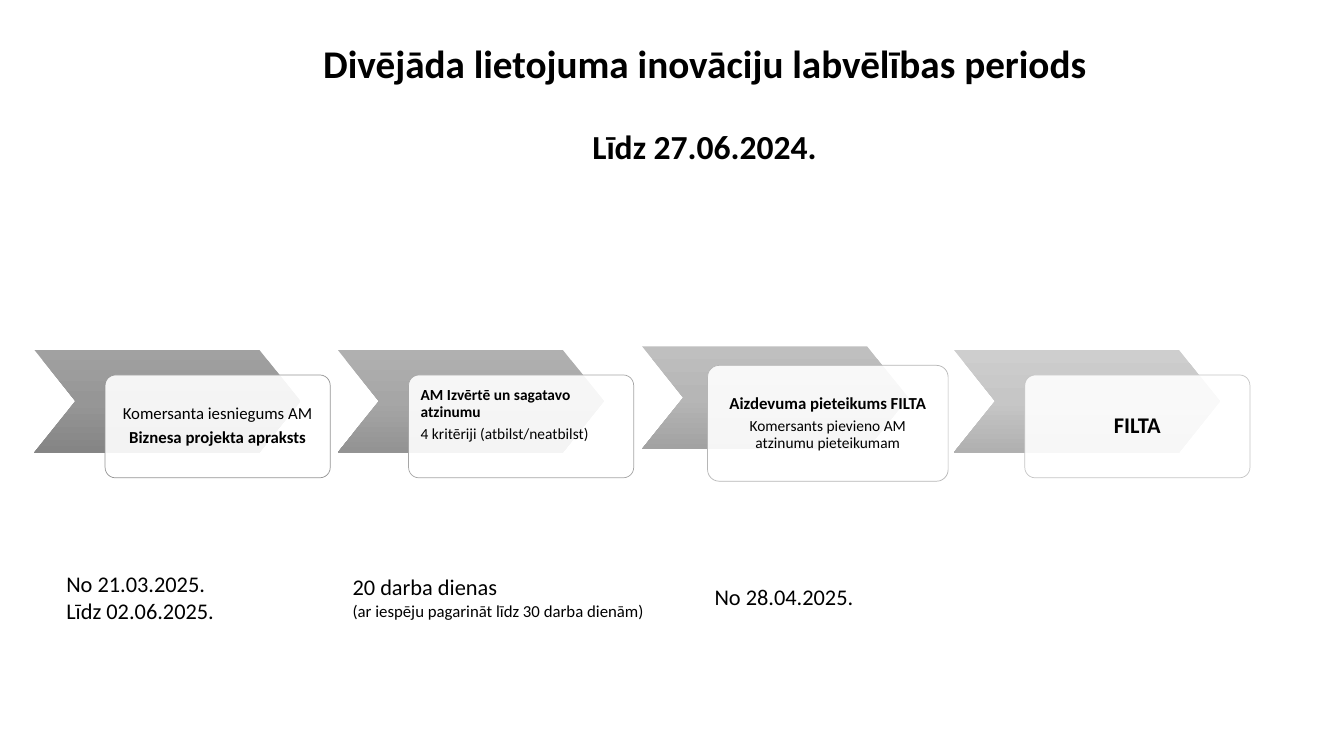
import copy
from dataclasses import dataclass

from lxml import etree
from pptx import Presentation
from pptx import util as u
from pptx.dml.color import RGBColor
from pptx.enum import shapes, text
from pptx.oxml.ns import qn


@dataclass(frozen=True)
class Theme:
    """Fonts, type sizes and colours of the slide."""
    font: str = "Calibri"
    ink: str = "000000"
    paper: str = "FFFFFF"
    title: int = 28
    subtitle: int = 24
    large: int = 16
    body: int = 12
    small: int = 11
    shades: tuple = (
        ("A1A1A1", "969696", "858585"),
        ("B0B0B0", "A6A6A6", "939393"),
        ("BFBFBF", "B6B6B6", "A2A2A2"),
        ("CECECE", "C6C6C6", "B0B0B0"),
    )


class Deck:
    """Draws styled elements on a grid of 100 columns by 100 rows."""

    def __init__(self, theme):
        """Open a wide presentation with one title-only slide."""
        self.theme = theme
        self.prs = Presentation()
        self.prs.slide_width, self.prs.slide_height = u.Inches(13.333), u.Inches(7.5)
        self.s = self.prs.slides.add_slide(self.prs.slide_layouts[5])

    def box(self, x, y, w, h):
        """Turn columns and rows into slide lengths."""
        col, row = self.prs.slide_width / 100, self.prs.slide_height / 100
        return [int(n) for n in (x * col, y * row, w * col, h * row)]

    def add_lines(self, tf, lines, align, gap=0, spacing=None):
        """Add one paragraph for each (text, size, bold) line."""
        tf.word_wrap = True
        for i, (words, size, bold) in enumerate(lines):
            p = tf.add_paragraph() if i else tf.paragraphs[0]
            p.alignment = align
            p.space_before, p.space_after = u.Pt(gap if i else 0), u.Pt(0)
            if spacing:
                p.line_spacing = spacing
            r = p.add_run()
            r.text = words
            r.font.name, r.font.size, r.font.bold = self.theme.font, u.Pt(size), bold
            r.font.color.rgb = RGBColor.from_string(self.theme.ink)

    def title(self, place, lines):
        """Fill and place the title placeholder."""
        sp = self.s.shapes.title
        sp.left, sp.top, sp.width, sp.height = self.box(*place)
        tf = sp.text_frame
        tf.auto_size = text.MSO_AUTO_SIZE.NONE
        tf.vertical_anchor = text.MSO_ANCHOR.MIDDLE
        self.add_lines(tf, lines, text.PP_ALIGN.CENTER, gap=31, spacing=0.9)

    def shape(self, kind, place, adjust):
        """Add a preset shape without shadow."""
        sp = self.s.shapes.add_shape(kind, *self.box(*place))
        sp.adjustments[0] = adjust
        sp.shadow.inherit = False
        return sp

    def chevron(self, place, shades):
        """Add a chevron shaded from top to bottom."""
        sp = self.shape(shapes.MSO_SHAPE.CHEVRON, place, 0.4)
        sp.line.fill.background()
        sp.fill.gradient()
        sp.fill.gradient_angle = 270
        stops = sp._element.spPr.find(".//" + qn("a:gsLst"))
        stops.insert(1, copy.deepcopy(stops[0]))
        for i, (stop, shade) in enumerate(zip(sp.fill.gradient_stops, shades)):
            stop.position = i / 2
            stop.color.rgb = RGBColor.from_string(shade)

    def card(self, place, lines, shade, align, anchor, inset):
        """Add a translucent rounded card with text."""
        sp = self.shape(shapes.MSO_SHAPE.ROUNDED_RECTANGLE, place, 0.1)
        sp.fill.solid()
        sp.fill.fore_color.rgb = RGBColor.from_string(self.theme.paper)
        colour = sp._element.spPr.find(qn("a:solidFill"))[0]
        etree.SubElement(colour, qn("a:alpha"), val="90000")
        sp.line.color.rgb = RGBColor.from_string(shade)
        sp.line.width = u.Pt(0.5)
        tf = sp.text_frame
        tf.vertical_anchor = anchor
        tf.margin_left = tf.margin_right = u.Inches(inset)
        tf.margin_top = tf.margin_bottom = u.Inches(inset)
        self.add_lines(tf, lines, align, gap=4, spacing=0.9)

    def note(self, place, lines):
        """Add a plain text box."""
        sp = self.s.shapes.add_textbox(*self.box(*place))
        self.add_lines(sp.text_frame, lines, text.PP_ALIGN.LEFT)


def main():
    """Build the slide and save it."""
    t = Theme()
    deck = Deck(t)
    deck.title((15.38, 4.27, 74.1, 19.33), [
        ("Divējāda lietojuma inovāciju labvēlības periods", t.title, True),
        ("Līdz 27.06.2024.", t.subtitle, True),
    ])

    center, left = text.PP_ALIGN.CENTER, text.PP_ALIGN.LEFT
    middle, top = text.MSO_ANCHOR.MIDDLE, text.MSO_ANCHOR.TOP
    card_y, card_w, card_h = 49.6, 16.75, 13.6
    steps = [
        (2.55, 46.27, (7.82, card_y, card_w, card_h), center, middle, 0.09, [
            ("Komersanta iesniegums AM", t.body, False),
            ("Biznesa projekta apraksts", t.body, True)]),
        (25.13, 46.27, (30.4, card_y, card_w, card_h), left, top, 0.09, [
            ("AM Izvērtē un sagatavo atzinumu", t.small, True),
            ("4 kritēriji (atbilst/neatbilst)", t.small, False)]),
        (47.77, 45.8, (52.65, 48.33, 17.9, 15.33), center, middle, 0.09, [
            ("Aizdevuma pieteikums FILTA", t.body, True),
            ("Komersants pievieno AM atzinumu pieteikumam", t.small, False)]),
        (70.97, 46.27, (76.25, card_y, card_w, card_h), center, middle, 0.12, [
            ("FILTA", t.large, True)]),
    ]
    for (x, y, place, align, anchor, inset, lines), shades in zip(steps, t.shades):
        deck.chevron((x, y, 19.8, 13.6), shades)
        deck.card(place, lines, shades[1], align, anchor, inset)

    deck.note((4.2, 74.8, 17.85, 8.53), [
        ("No 21.03.2025.", t.large, False),
        ("Līdz 02.06.2025.", t.large, False)])
    deck.note((25.5, 75.2, 23.48, 7.6), [
        ("20 darba dienas", t.large, False),
        ("(ar iespēju pagarināt līdz 30 darba dienām)", t.body, False)])
    deck.note((52.43, 76.53, 17.85, 4.93), [("No 28.04.2025.", t.large, False)])
    deck.prs.save("out.pptx")


if __name__ == "__main__":
    main()
